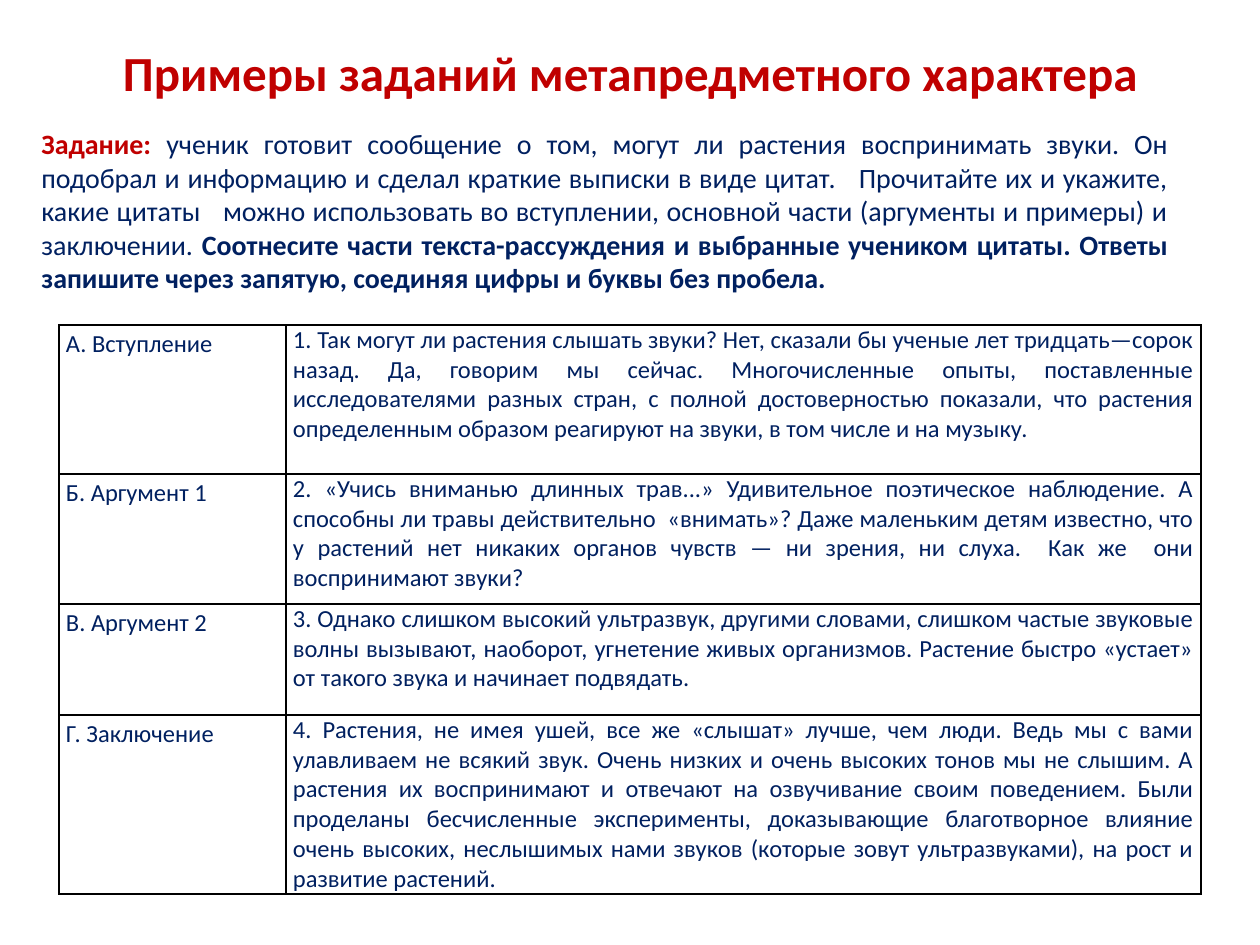
"""Build a slide with a task about plants and sounds and a table of quotations."""
import dataclasses

import lxml.etree
import pptx
import pptx.dml.color
import pptx.enum.text
import pptx.oxml.ns
import pptx.presentation
import pptx.slide
import pptx.table
import pptx.text.text
import pptx.util

EMU_PER_PX = 914400 / 126
FONT = "Calibri"
RED = pptx.dml.color.RGBColor(0xC0, 0x00, 0x00)
NAVY = pptx.dml.color.RGBColor(0x00, 0x20, 0x60)
BLACK = pptx.dml.color.RGBColor(0x00, 0x00, 0x00)
ALIGN = pptx.enum.text.PP_ALIGN
ANCHOR = pptx.enum.text.MSO_ANCHOR


@dataclasses.dataclass(frozen=True)
class Box:
    left: int
    top: int
    width: int
    height: int


@dataclasses.dataclass(frozen=True)
class Phrase:
    text: str
    color: pptx.dml.color.RGBColor
    bold: bool


@dataclasses.dataclass(frozen=True)
class Part:
    label: str
    quote: str
    height: int


TITLE = "Примеры заданий метапредметного характера"
TITLE_BOX = Box(0, 36, 1260, 72)
TASK_BOX = Box(29, 119, 1152, 183)
TABLE_BOX = Box(59, 325, 1142, 560)
COLUMN_WIDTHS = (227, 915)
CELL_INSET = 7

TASK = (
    Phrase("Задание: ", RED, True),
    Phrase(
        "ученик готовит сообщение о том, могут ли растения воспринимать звуки. "
        "Он подобрал и информацию и сделал краткие выписки в виде цитат.   "
        "Прочитайте их и укажите, какие цитаты   можно использовать во вступлении, "
        "основной части (аргументы и примеры) и заключении. ",
        NAVY, False),
    Phrase(
        "Соотнесите части текста-рассуждения и выбранные учеником цитаты. "
        "Ответы запишите через запятую, соединяя цифры и буквы без пробела.",
        NAVY, True),
)

PARTS = (
    Part("А. Вступление",
         "1. Так могут ли растения слышать звуки? Нет, сказали бы ученые лет "
         "тридцать—сорок назад. Да, говорим мы сейчас. Многочисленные опыты, "
         "поставленные исследователями разных стран, с полной достоверностью "
         "показали, что растения определенным образом реагируют на звуки, "
         "в том числе и на музыку.", 149),
    Part("Б. Аргумент 1",
         "2. «Учись вниманью длинных трав...» Удивительное поэтическое наблюдение. "
         "А способны ли травы действительно  «внимать»? Даже маленьким детям "
         "известно, что у растений нет никаких органов чувств — ни зрения, "
         "ни слуха.  Как же  они воспринимают звуки?", 130),
    Part("В. Аргумент 2",
         "3. Однако слишком высокий ультразвук, другими словами, слишком частые "
         "звуковые волны вызывают, наоборот, угнетение живых организмов. Растение "
         "быстро «устает» от такого звука и начинает подвядать.", 111),
    Part("Г. Заключение",
         "4. Растения, не имея ушей, все же «слышат» лучше, чем люди. Ведь мы с "
         "вами улавливаем не всякий звук. Очень низких и очень высоких тонов мы "
         "не слышим. А растения их воспринимают и отвечают на озвучивание своим "
         "поведением. Были проделаны бесчисленные эксперименты, доказывающие "
         "благотворное влияние очень высоких, неслышимых нами звуков (которые "
         "зовут ультразвуками), на рост и развитие растений.", 170),
)


def px(length: int) -> int:
    """Convert px to EMU."""
    return round(length * EMU_PER_PX)


def place(box: Box) -> tuple[int, int, int, int]:
    """Return the box's left, top, width and height in EMU."""
    return px(box.left), px(box.top), px(box.width), px(box.height)


def style_run(run: pptx.text.text._Run, size: int,
              color: pptx.dml.color.RGBColor, bold: bool) -> None:
    """Set the font of a run."""
    run.font.name = FONT
    run.font.size = pptx.util.Pt(size)
    run.font.bold = bold
    run.font.color.rgb = color


def draw_title(slide: pptx.slide.Slide) -> None:
    """Move, fill and format the title placeholder."""
    title = slide.shapes.title
    title.left, title.top, title.width, title.height = place(TITLE_BOX)
    frame = title.text_frame
    frame.text = TITLE
    frame.auto_size = pptx.enum.text.MSO_AUTO_SIZE.NONE
    frame.vertical_anchor = ANCHOR.TOP
    frame.paragraphs[0].alignment = ALIGN.CENTER
    style_run(frame.paragraphs[0].runs[0], 28, RED, True)


def draw_task(slide: pptx.slide.Slide) -> None:
    """Draw the task wording."""
    frame = slide.shapes.add_textbox(*place(TASK_BOX)).text_frame
    frame.word_wrap = True
    frame.vertical_anchor = ANCHOR.MIDDLE
    paragraph = frame.paragraphs[0]
    paragraph.alignment = ALIGN.JUSTIFY
    for phrase in TASK:
        run = paragraph.add_run()
        run.text = phrase.text
        style_run(run, 16, phrase.color, phrase.bold)


def outline_cell(cell: pptx.table._Cell) -> None:
    """Give a cell solid borders on its four sides."""
    properties = cell._tc.get_or_add_tcPr()
    qn = pptx.oxml.ns.qn
    for index, side in enumerate(("a:lnL", "a:lnR", "a:lnT", "a:lnB")):
        line = lxml.etree.Element(qn(side), w=str(pptx.util.Pt(1)))
        fill = lxml.etree.SubElement(line, qn("a:solidFill"))
        lxml.etree.SubElement(fill, qn("a:srgbClr"), val=str(BLACK))
        properties.insert(index, line)


def fill_cell(cell: pptx.table._Cell, text: str, spacing: float) -> None:
    """Write and format one table cell."""
    cell.margin_left = cell.margin_right = px(CELL_INSET)
    cell.margin_top = cell.margin_bottom = 0
    cell.fill.background()
    outline_cell(cell)
    cell.text_frame.text = text
    paragraph = cell.text_frame.paragraphs[0]
    paragraph.alignment = ALIGN.JUSTIFY
    paragraph.line_spacing = spacing
    style_run(paragraph.runs[0], 14, NAVY, False)


def draw_parts(slide: pptx.slide.Slide) -> None:
    """Draw the table of text parts and quotations."""
    table = slide.shapes.add_table(
        len(PARTS), len(COLUMN_WIDTHS), *place(TABLE_BOX)).table
    table.first_row = table.horz_banding = False
    for column, width in zip(table.columns, COLUMN_WIDTHS):
        column.width = px(width)
    for row, part in zip(table.rows, PARTS):
        row.height = px(part.height)
        fill_cell(row.cells[0], part.label, 1.15)
        fill_cell(row.cells[1], part.quote, 1.0)


def main() -> None:
    """Build and save the presentation."""
    deck = pptx.Presentation()
    deck.slide_width, deck.slide_height = px(1260), px(945)
    slide = deck.slides.add_slide(deck.slide_layouts[5])
    draw_title(slide)
    draw_parts(slide)
    draw_task(slide)
    deck.save("out.pptx")


if __name__ == "__main__":
    main()
